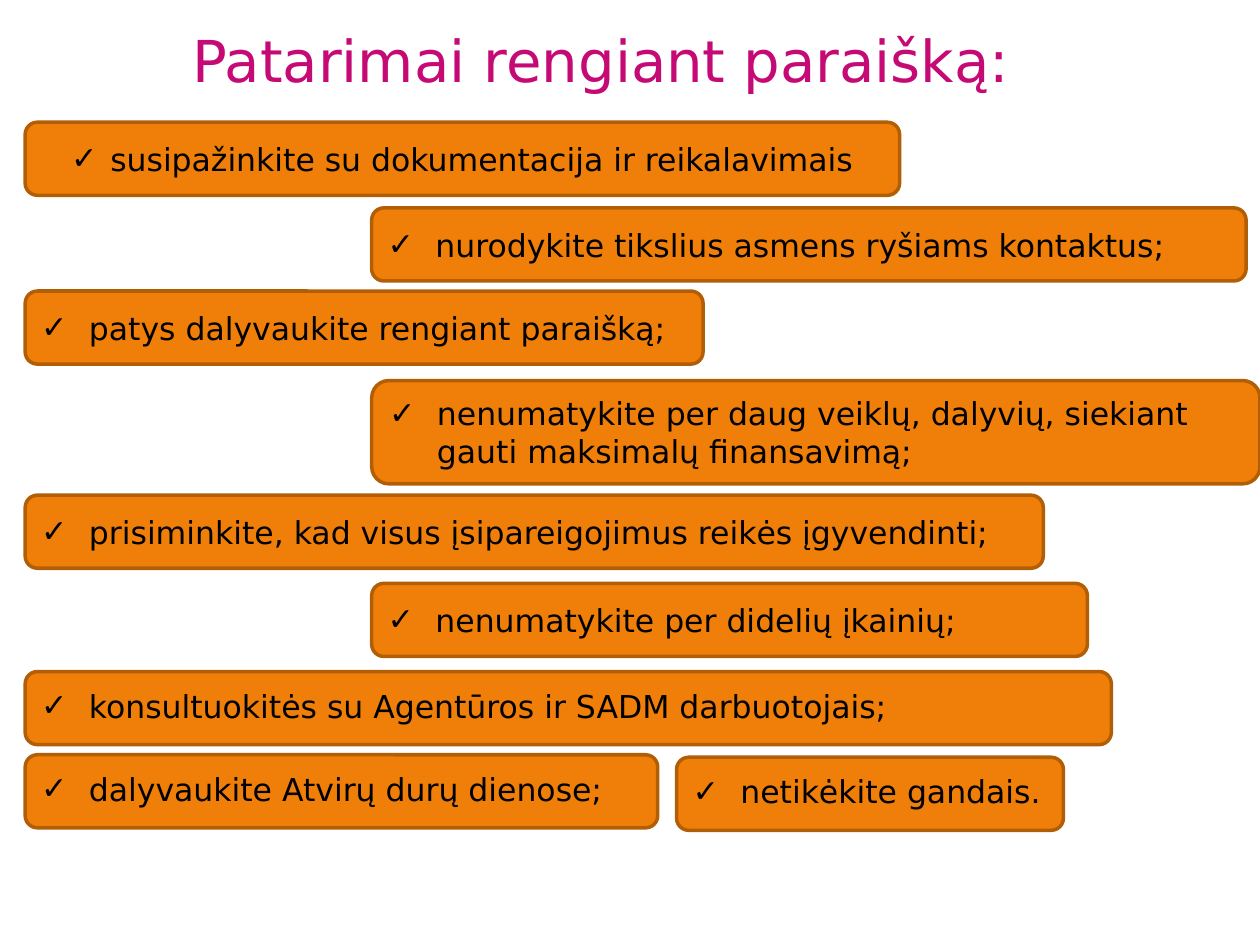
"""Build a slide of staggered tips for preparing an application."""
from typing import NamedTuple

from lxml.etree import SubElement
from pptx import Presentation
from pptx.dml.color import RGBColor
from pptx.enum.shapes import MSO_SHAPE as Shape
from pptx.enum.text import MSO_ANCHOR as Anchor, PP_ALIGN as Align
from pptx.oxml.ns import qn
from pptx.util import Inches, Pt

PINK = RGBColor(0xC6, 0x0A, 0x75)
ORANGE = RGBColor(0xF0, 0x7F, 0x09)
BROWN = RGBColor(0xB2, 0x5E, 0x07)
BLACK = RGBColor(0, 0, 0)
FONT = "DejaVu Sans"
LEFT, RIGHT = 0.2, 2.95


class Tip(NamedTuple):
    text: str
    x: float
    y: float
    width: float
    height: float = 0.58
    align: Align = Align.LEFT
    indent: float = 0.38
    space: float = 1.0


TIGHT = {"align": Align.JUSTIFY, "space": 0.88}
TIPS = [
    Tip("susipažinkite su dokumentacija ir reikalavimais", LEFT, 0.97, 6.94,
        align=Align.CENTER, indent=0.31),
    Tip("nurodykite tikslius asmens ryšiams kontaktus;", RIGHT, 1.65, 6.94),
    Tip("patys dalyvaukite rengiant paraišką;", LEFT, 2.31, 5.38),
    Tip("nenumatykite per daug veiklų, dalyvių, siekiant gauti maksimalų finansavimą;",
        RIGHT, 3.02, 7.05, 0.82),
    Tip("prisiminkite, kad visus įsipareigojimus reikės įgyvendinti;", LEFT, 3.93, 8.08),
    Tip("nenumatykite per didelių įkainių;", RIGHT, 4.63, 5.68),
    Tip("konsultuokitės su Agentūros ir SADM darbuotojais;", LEFT, 5.33, 8.62, **TIGHT),
    Tip("dalyvaukite Atvirų durų dienose;", LEFT, 5.99, 5.02, **TIGHT),
    Tip("netikėkite gandais.", 5.37, 6.01, 3.07, **TIGHT),
]


def write(shape, text: str, *, size: float, color: RGBColor, anchor: Anchor,
          align: Align = Align.LEFT, space: float = 1.0, indent: float = 0) -> None:
    frame = shape.text_frame
    frame.word_wrap = True
    frame.vertical_anchor = anchor
    para = frame.paragraphs[0]
    if indent:
        props = para._p.get_or_add_pPr()
        props.set("marL", str(Inches(indent)))
        props.set("indent", str(-Inches(indent)))
        SubElement(props, qn("a:buFont")).set("typeface", FONT)
        SubElement(props, qn("a:buChar")).set("char", "✓")
    para.alignment = align
    para.line_spacing = space
    run = para.add_run()
    run.text = text
    run.font.name = FONT
    run.font.size = Pt(size)
    run.font.color.rgb = color


def draw(slide, tip: Tip) -> None:
    box = slide.shapes.add_shape(Shape.ROUNDED_RECTANGLE, Inches(tip.x), Inches(tip.y),
                                 Inches(tip.width), Inches(tip.height))
    box.shadow.inherit = False
    box.fill.solid()
    box.fill.fore_color.rgb = ORANGE
    box.line.color.rgb = BROWN
    box.line.width = Pt(2)
    write(box, tip.text, size=18, color=BLACK, anchor=Anchor.MIDDLE,
          align=tip.align, space=tip.space, indent=tip.indent)


def main() -> None:
    deck = Presentation()
    deck.slide_width, deck.slide_height = Inches(10), Inches(7.5)
    slide = deck.slides.add_slide(deck.slide_layouts[5])
    title = slide.shapes.title
    title.left, title.top = Inches(1.43), Inches(0.15)
    title.width, title.height = Inches(7.87), Inches(0.87)
    write(title, "Patarimai rengiant paraišką:", size=33, color=PINK, anchor=Anchor.TOP)
    for tip in TIPS:
        draw(slide, tip)
    deck.save("out.pptx")


if __name__ == "__main__":
    main()
